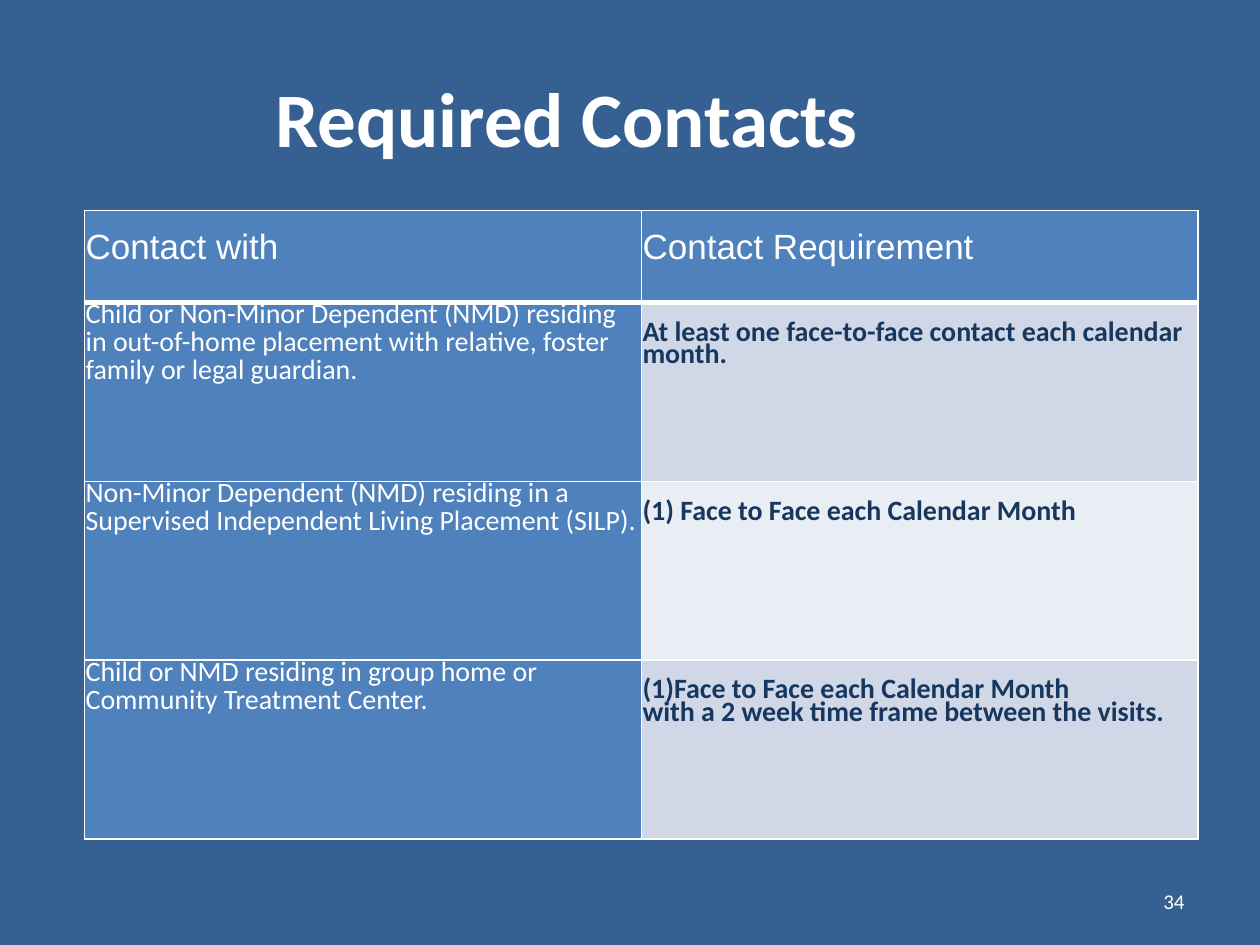
from dataclasses import dataclass

from lxml import etree
from pptx import Presentation
from pptx.dml.color import RGBColor
from pptx.enum.text import MSO_ANCHOR, PP_ALIGN
from pptx.oxml.ns import qn
from pptx.util import Inches, Pt

MIDDLE = MSO_ANCHOR.MIDDLE
LEFT, CENTER, RIGHT = PP_ALIGN.LEFT, PP_ALIGN.CENTER, PP_ALIGN.RIGHT

BACKGROUND = RGBColor(0x37, 0x60, 0x92)
WHITE = RGBColor(0xFF, 0xFF, 0xFF)
NAVY = RGBColor(0x17, 0x37, 0x5E)
BLUE = RGBColor(0x4F, 0x81, 0xBD)
BAND_DARK = RGBColor(0xD0, 0xD8, 0xE8)
BAND_LIGHT = RGBColor(0xE9, 0xED, 0xF4)

COLUMN_WIDTH = 4.42
HEADER_HEIGHT = 0.73
CONTACT_HEIGHT = 1.42
CELL_INSET = 0.01


@dataclass(frozen=True)
class TextStyle:
    size: float
    color: RGBColor = WHITE
    bold: bool = False
    font: str = "Calibri"
    align: PP_ALIGN = LEFT
    line_pt: float | None = None
    top_inset: float = CELL_INSET


@dataclass(frozen=True)
class Contact:
    person: str
    requirement: tuple[str, ...]


TITLE = TextStyle(44, bold=True, align=CENTER)
PAGE_NUMBER = TextStyle(12, align=RIGHT)
HEADER = TextStyle(20, font="Arial", line_pt=15.9, top_inset=0.23)
PERSON = TextStyle(16, line_pt=15.9)
REQUIREMENT = TextStyle(16, NAVY, bold=True, line_pt=12.8, top_inset=0.19)

HEADINGS = ("Contact with", "Contact Requirement")
CONTACTS = (
    Contact("Child or Non-Minor Dependent (NMD) residing in out-of-home placement "
            "with relative, foster family or legal guardian.",
            ("At least one face-to-face contact each calendar month.",)),
    Contact("Non-Minor Dependent (NMD) residing in a Supervised Independent "
            "Living Placement (SILP).",
            ("(1) Face to Face each Calendar Month",)),
    Contact("Child or NMD residing in group home or Community Treatment Center.",
            ("(1)Face to Face each Calendar Month",
             "with a 2 week time frame between the visits.")),
)


def write(frame, lines: tuple[str, ...], style: TextStyle) -> None:
    frame.word_wrap = True
    for index, line in enumerate(lines):
        paragraph = frame.paragraphs[0] if index == 0 else frame.add_paragraph()
        paragraph.alignment = style.align
        if style.line_pt:
            paragraph.line_spacing = Pt(style.line_pt)
        run = paragraph.add_run()
        run.text = line
        run.font.color.rgb = style.color
        font_values = {"size": Pt(style.size), "bold": style.bold, "name": style.font}
        for name, value in font_values.items():
            setattr(run.font, name, value)


def add_label(slide, text: str, left: float, top: float, width: float,
              height: float, style: TextStyle) -> None:
    box = slide.shapes.add_textbox(Inches(left), Inches(top), Inches(width), Inches(height))
    box.text_frame.vertical_anchor = MIDDLE
    write(box.text_frame, (text,), style)


def set_borders(cell, bottom_pt: float) -> None:
    """Give the cell white edges, 1 pt except at the bottom."""
    properties = cell._tc.get_or_add_tcPr()
    edges = {"a:lnL": 1, "a:lnR": 1, "a:lnT": 1, "a:lnB": bottom_pt}
    for position, (tag, width) in enumerate(edges.items()):
        edge = etree.Element(qn(tag), w=str(Pt(width)))
        fill = etree.SubElement(edge, qn("a:solidFill"))
        etree.SubElement(fill, qn("a:srgbClr"), val=str(WHITE))
        properties.insert(position, edge)


def fill_cell(cell, lines: tuple[str, ...], style: TextStyle, fill: RGBColor,
              bottom_pt: float = 1) -> None:
    margins = {"margin_left": CELL_INSET, "margin_right": CELL_INSET,
               "margin_top": style.top_inset, "margin_bottom": CELL_INSET}
    for name, value in margins.items():
        setattr(cell, name, Inches(value))
    cell.fill.solid()
    cell.fill.fore_color.rgb = fill
    set_borders(cell, bottom_pt)
    write(cell.text_frame, lines, style)


def add_contact_table(slide) -> None:
    heights = [HEADER_HEIGHT] + [CONTACT_HEIGHT] * len(CONTACTS)
    table = slide.shapes.add_table(
        len(heights), len(HEADINGS), Inches(0.67), Inches(1.67),
        Inches(COLUMN_WIDTH * len(HEADINGS)), Inches(sum(heights))).table
    table.first_row = table.horz_banding = False
    for row, height in zip(table.rows, heights):
        row.height = Inches(height)
    for column, heading in enumerate(HEADINGS):
        table.columns[column].width = Inches(COLUMN_WIDTH)
        fill_cell(table.cell(0, column), (heading,), HEADER, BLUE, bottom_pt=3)
    for row, contact in enumerate(CONTACTS, start=1):
        band = BAND_DARK if row % 2 else BAND_LIGHT
        fill_cell(table.cell(row, 0), (contact.person,), PERSON, BLUE)
        fill_cell(table.cell(row, 1), contact.requirement, REQUIREMENT, band)


def main() -> None:
    presentation = Presentation()
    presentation.slide_width, presentation.slide_height = Inches(10), Inches(7.5)
    slide = presentation.slides.add_slide(presentation.slide_layouts[6])
    slide.background.fill.solid()
    slide.background.fill.fore_color.rgb = BACKGROUND
    add_label(slide, "34", 7.17, 6.95, 2.33, 0.4, PAGE_NUMBER)
    add_label(slide, "Required Contacts", 0, 0.3, 9, 1.25, TITLE)
    add_contact_table(slide)
    presentation.save("out.pptx")


if __name__ == "__main__":
    main()
